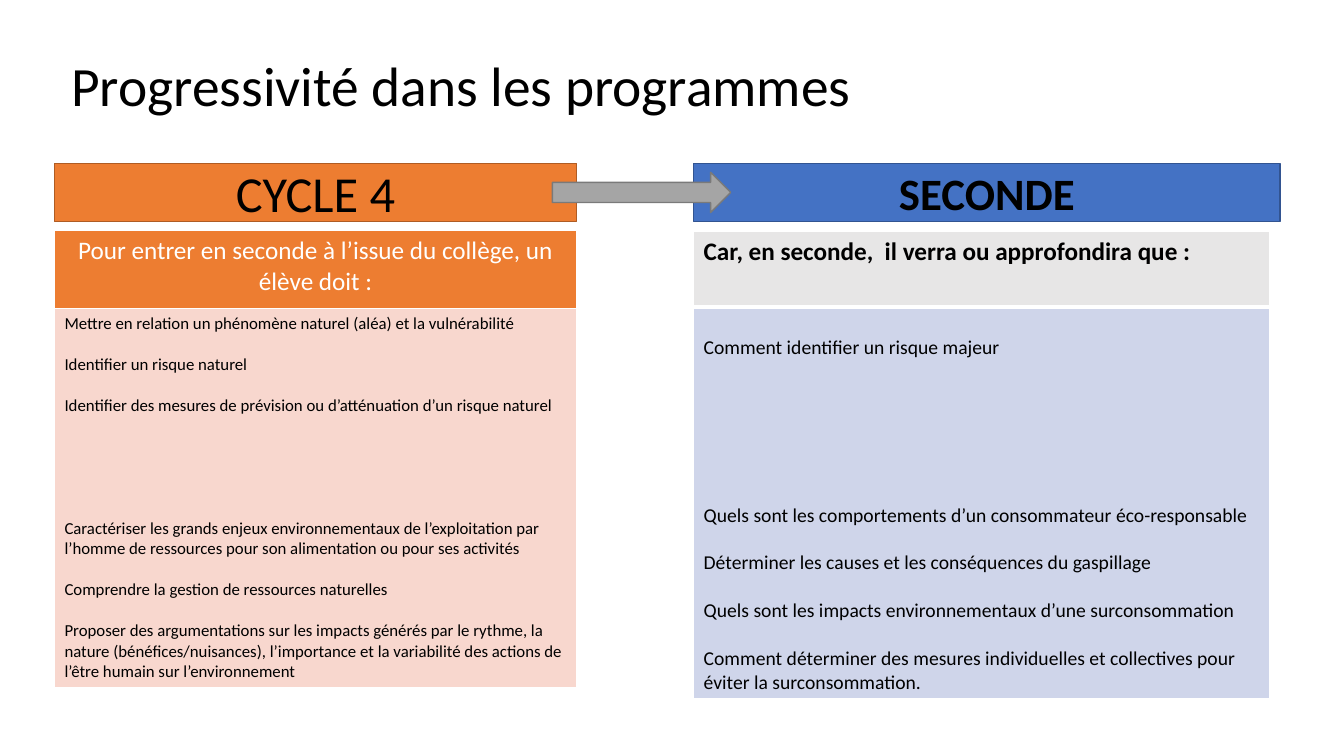
from lxml import etree
from pptx import Presentation
from pptx.dml import color
from pptx.enum import shapes, text
from pptx.oxml import ns
from pptx.util import Pt

LEFT, RIGHT = 38.9, 495.4
BAND_TOP, BAND_HEIGHT = 116.6, 41.8
CYCLE_HEADING = "Pour entrer en seconde à l’issue du collège, un élève doit :"
SECONDE_HEADING = "Car, en seconde,  il verra ou approfondira que :"
CYCLE_SKILLS = [
    ("Mettre en relation un phénomène naturel (aléa) et la vulnérabilité", 0),
    ("Identifier un risque naturel", 1),
    ("Identifier des mesures de prévision ou d’atténuation d’un risque naturel", 1),
    ("Caractériser les grands enjeux environnementaux de l’exploitation par l’homme "
     "de ressources pour son alimentation ou pour ses activités", 5),
    ("Comprendre la gestion de ressources naturelles", 1),
    ("Proposer des argumentations sur les impacts générés par le rythme, la nature "
     "(bénéfices/nuisances), l’importance et la variabilité des actions de l’être "
     "humain sur l’environnement", 1),
]
SECONDE_TOPICS = [
    ("Comment identifier un risque majeur", 0),
    ("Quels sont les comportements d’un consommateur éco-responsable", 6),
    ("Déterminer les causes et les conséquences du gaspillage", 1),
    ("Quels sont les impacts environnementaux d’une surconsommation", 1),
    ("Comment déterminer des mesures individuelles et collectives pour éviter la "
     "surconsommation.", 1),
]


def rgb(value):
    """Return the colour of a hex string."""
    return color.RGBColor.from_string(value)


def write(paragraph, words, size, ink="000000", bold=False, centred=False):
    """Add one formatted run to a paragraph."""
    paragraph.alignment = text.PP_ALIGN.CENTER if centred else text.PP_ALIGN.LEFT
    run = paragraph.add_run()
    run.text = words
    run.font.name = "Calibri"
    run.font.size = Pt(size)
    run.font.bold = bold
    run.font.color.rgb = rgb(ink)


def add_title(slide, words):
    """Add the slide title."""
    frame = slide.shapes.add_textbox(Pt(43.9), Pt(49), Pt(828), Pt(28.8)).text_frame
    frame.word_wrap = True
    frame.vertical_anchor = text.MSO_ANCHOR.MIDDLE
    frame.paragraphs[0].line_spacing = 0.9
    write(frame.paragraphs[0], words, 39.6)


def add_block(slide, kind, box, fill, outline):
    """Add a filled and outlined preset shape."""
    block = slide.shapes.add_shape(kind, *map(Pt, box))
    block.shadow.inherit = False
    block.fill.solid()
    block.fill.fore_color.rgb = rgb(fill)
    block.line.color.rgb = rgb(outline)
    block.line.width = Pt(1)
    return block


def add_band(slide, left, width, fill, outline, words, size, bold=False):
    """Add the band that names a school level."""
    box = (left, BAND_TOP, width, BAND_HEIGHT)
    band = add_block(slide, shapes.MSO_SHAPE.RECTANGLE, box, fill, outline)
    band.text_frame.vertical_anchor = text.MSO_ANCHOR.MIDDLE
    write(band.text_frame.paragraphs[0], words, size, bold=bold, centred=True)


def style_cell(cell, fill, top=1, bottom=1):
    """Fill a cell and give it white borders."""
    cell.fill.solid()
    cell.fill.fore_color.rgb = rgb(fill)
    properties = cell._tc.get_or_add_tcPr()
    widths = {"a:lnL": 1, "a:lnR": 1, "a:lnT": top, "a:lnB": bottom}
    for index, (tag, width) in enumerate(widths.items()):
        border = etree.Element(ns.qn(tag), w=str(Pt(width)))
        paint = etree.SubElement(border, ns.qn("a:solidFill"))
        etree.SubElement(paint, ns.qn("a:srgbClr"), val="FFFFFF")
        properties.insert(index, border)


def add_programme(slide, box, heights, fills, divider):
    """Add a heading cell above a content cell and return both."""
    table = slide.shapes.add_table(2, 1, *map(Pt, box), Pt(sum(heights))).table
    for row, height in zip(table.rows, heights):
        row.height = Pt(height)
    heading, content = table.cell(0, 0), table.cell(1, 0)
    style_cell(heading, fills[0], bottom=divider)
    style_cell(content, fills[1], top=divider)
    return heading, content


def write_items(cell, items, size):
    """Write items, each with the number of line heights left above it."""
    frame = cell.text_frame
    for index, (words, gap) in enumerate(items):
        paragraph = frame.add_paragraph() if index else frame.paragraphs[0]
        paragraph.space_before = Pt(round(gap * size * 1.22, 2))
        write(paragraph, words, size)


def main():
    """Build and save the slide."""
    deck = Presentation()
    deck.slide_width, deck.slide_height = Pt(960), Pt(540)
    slide = deck.slides.add_slide(deck.slide_layouts[6])
    add_title(slide, "Progressivité dans les programmes")
    add_band(slide, LEFT, 373, "ED7D31", "AF5C24", "CYCLE 4", 36)
    add_band(slide, RIGHT, 419, "4472C4", "325491", "SECONDE", 32, bold=True)

    heading, skills = add_programme(
        slide, (LEFT, 164.5, 373), (56, 270.5), ("ED7D31", "F8D7CE"), 1)
    write(heading.text_frame.paragraphs[0], CYCLE_HEADING, 18, "FFFFFF", centred=True)
    skills.vertical_anchor = text.MSO_ANCHOR.MIDDLE
    write_items(skills, CYCLE_SKILLS, 12)

    heading, topics = add_programme(
        slide, (RIGHT, 165, 411.8), (54.5, 279.4), ("E7E6E6", "CFD5EA"), 3)
    write(heading.text_frame.paragraphs[0], SECONDE_HEADING, 18, bold=True)
    topics.margin_top = Pt(20.7)
    write_items(topics, SECONDE_TOPICS, 14)

    add_block(slide, shapes.MSO_SHAPE.RIGHT_ARROW, (394.6, 123.1, 127.4, 28.8),
              "A5A5A5", "7A7A7A")
    deck.save("out.pptx")


if __name__ == "__main__":
    main()
